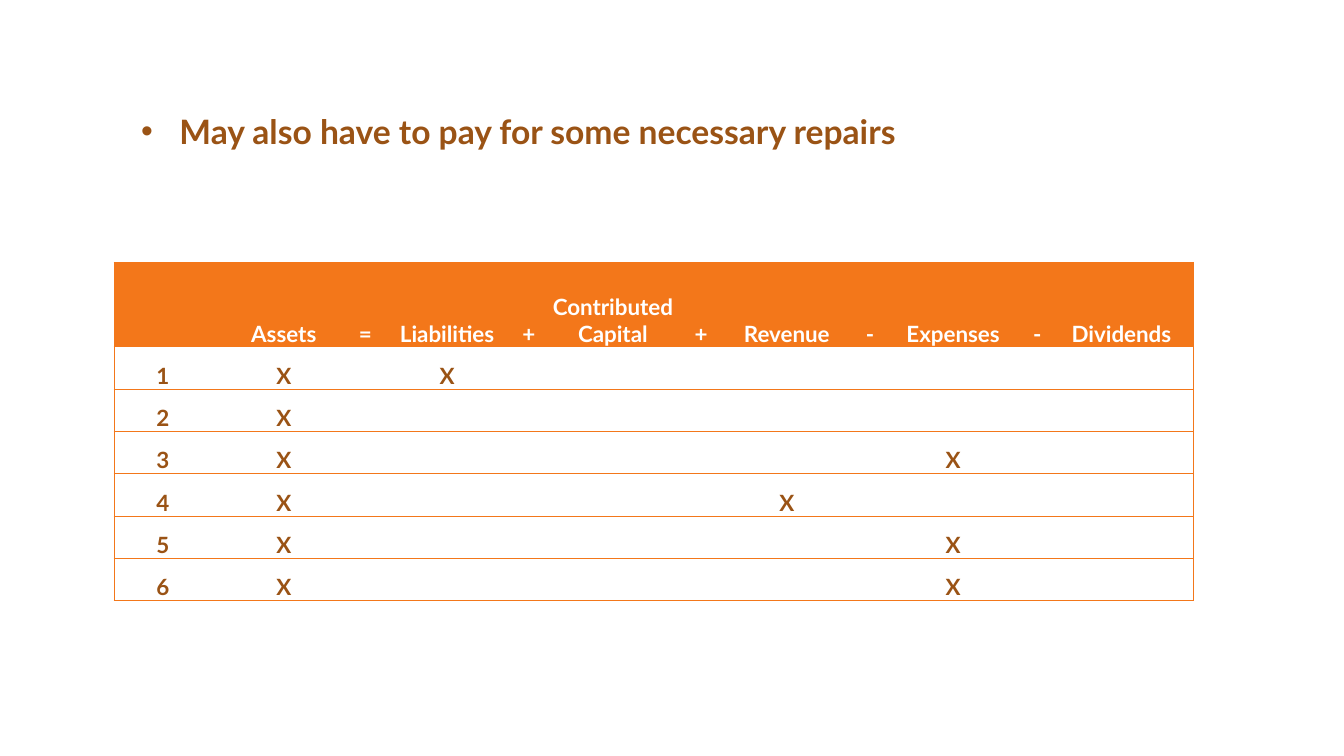
"""Build a slide showing how six transactions affect the accounting equation."""
import pptx
import pptx.dml.color
import pptx.enum.text
import pptx.oxml
import pptx.oxml.ns
import pptx.util

ORANGE = pptx.dml.color.RGBColor(0xF3, 0x77, 0x1A)
BROWN = pptx.dml.color.RGBColor(0x9A, 0x53, 0x15)
WHITE = pptx.dml.color.RGBColor(0xFF, 0xFF, 0xFF)

HEADINGS = ["", "Assets", "=", "Liabilities", "+", "Contributed Capital", "+",
            "Revenue", "-", "Expenses", "-", "Dividends"]
AFFECTED = [("Assets", "Liabilities"), ("Assets",), ("Assets", "Expenses"),
            ("Assets", "Revenue"), ("Assets", "Expenses"), ("Assets", "Expenses")]
COLUMN_WIDTHS = [97, 143, 19, 143, 19, 148, 27, 143, 22, 143, 24, 143]
HEADER_HEIGHT, ENTRY_HEIGHT = 84, 42


def px(length):
    return pptx.util.Emu(length * 9144)


def apply(target, values):
    for name, value in values.items():
        setattr(target, name, value)


class EquationSlide:
    font_name = "Lato"
    cell_format = {
        "margin_left": px(1), "margin_right": px(1), "margin_top": px(1),
        "margin_bottom": 0, "vertical_anchor": pptx.enum.text.MSO_ANCHOR.BOTTOM,
    }

    def __init__(self, deck):
        self.slide = deck.slides.add_slide(deck.slide_layouts[1])
        unused_title = self.slide.shapes.title.element
        unused_title.getparent().remove(unused_title)

    def style(self, paragraph, size, color):
        apply(paragraph.font, {"name": self.font_name, "size": pptx.util.Pt(size), "bold": True})
        paragraph.font.color.rgb = color

    def bullet(self, text, left, top, width, height):
        body = self.slide.placeholders[1]
        apply(body, {"left": px(left), "top": px(top), "width": px(width), "height": px(height)})
        point = body.text_frame.paragraphs[0]
        point.text = text
        properties = point._p.get_or_add_pPr()
        properties.set("marL", str(px(38)))
        properties.set("indent", str(-px(38)))
        properties.append(pptx.oxml.parse_xml(
            f'<a:buChar {pptx.oxml.ns.nsdecls("a")} char="•"/>'))
        point.space_before = 0
        self.style(point, 24, BROWN)

    def border(self, cell, side, visible):
        paint = f'<a:solidFill><a:srgbClr val="{ORANGE}"/></a:solidFill>' if visible else "<a:noFill/>"
        cell._tc.get_or_add_tcPr().append(pptx.oxml.parse_xml(
            f'<a:ln{side} {pptx.oxml.ns.nsdecls("a")} w="6350">{paint}</a:ln{side}>'))

    def cell(self, cell, text, is_header, is_first, is_last):
        apply(cell, self.cell_format)
        for side, visible in {"L": is_first, "R": is_last, "T": True, "B": True}.items():
            self.border(cell, side, visible)
        if is_header:
            cell.fill.solid()
            cell.fill.fore_color.rgb = ORANGE
        else:
            cell.fill.background()
        entry = cell.text_frame.paragraphs[0]
        entry.text = text
        entry.alignment = pptx.enum.text.PP_ALIGN.CENTER
        self.style(entry, 16, WHITE if is_header else BROWN)

    def table(self, rows, left, top, widths, heights):
        grid = self.slide.shapes.add_table(
            len(rows), len(widths), px(left), px(top), px(sum(widths)), px(sum(heights))).table
        for column, width in zip(grid.columns, widths):
            column.width = px(width)
        for row, height in zip(grid.rows, heights):
            row.height = px(height)
        for r, texts in enumerate(rows):
            for c, text in enumerate(texts):
                self.cell(grid.cell(r, c), text, r == 0, c == 0, c == len(widths) - 1)


def main():
    deck = pptx.Presentation()
    apply(deck, {"slide_width": px(1333), "slide_height": px(750)})
    equation = EquationSlide(deck)
    equation.bullet("May also have to pay for some necessary repairs", 130, 105, 1100, 580)
    entries = [
        [str(number)] + ["X" if heading in accounts else "" for heading in HEADINGS[1:]]
        for number, accounts in enumerate(AFFECTED, 1)
    ]
    heights = [HEADER_HEIGHT] + [ENTRY_HEIGHT] * len(entries)
    equation.table([HEADINGS] + entries, 113, 260, COLUMN_WIDTHS, heights)
    deck.save("out.pptx")


if __name__ == "__main__":
    main()
